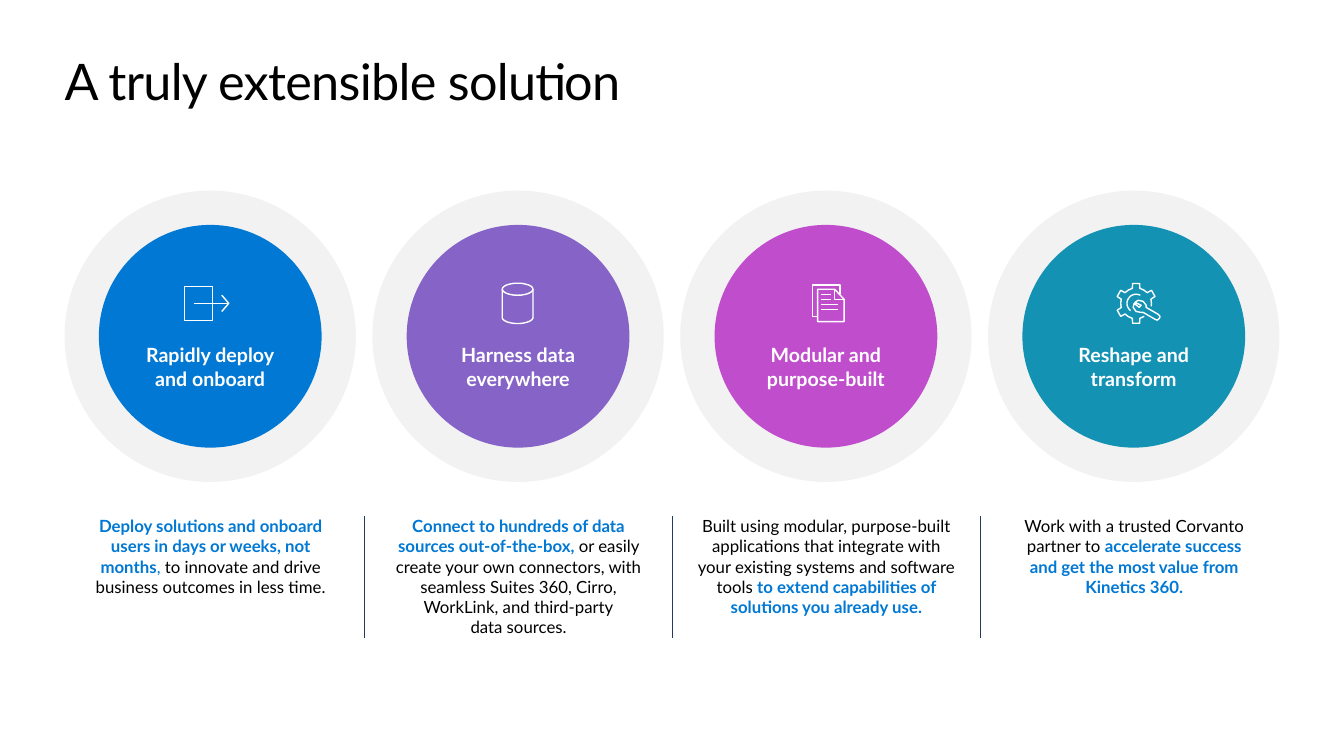
from math import cos, radians, sin

from lxml.etree import SubElement
from pptx import Presentation
from pptx.dml.color import RGBColor
from pptx.enum.shapes import MSO_CONNECTOR as Connector, MSO_SHAPE as Shape
from pptx.enum.text import MSO_ANCHOR as Anchor, PP_ALIGN as Align
from pptx.oxml.ns import qn
from pptx.util import Pt

COLORS = {
    "black": "000000", "white": "FFFFFF", "ring": "F2F2F2", "divider": "243A5E",
    "blue": "0078D4", "purple": "8663C6", "magenta": "BF4DCC", "teal": "1392B4",
}
FONT = "Lato"


def arc(cx, cy, rx, ry, start, end, steps=24):
    """Points along an ellipse; angles in degrees, clockwise from the right."""
    angles = [radians(start + (end - start) * i / steps) for i in range(steps + 1)]
    return [(cx + rx * cos(a), cy + ry * sin(a)) for a in angles]


def gear_outline(cx, cy, root, tip):
    """Five teeth of a six-tooth gear; the gap leaves room for the wrench."""
    polar = [(root, 58)]
    for tooth in range(90, 331, 60):
        polar += [(root, tooth - 14), (tip, tooth - 10), (tip, tooth + 10),
                  (root, tooth + 14), (root, tooth + 30)]
    polar.append((root, 371))
    return [(cx + r * cos(radians(a)), cy + r * sin(radians(a))) for r, a in polar]


# Icon strokes, in points from the middle of the icon.
DEPLOY = [
    [(-11.2, 0), (13.3, 0)],
    [(8.3, 5.8), (13.3, 0), (8.3, -5.8)],
    [(-18.4, -12.2), (-18.4, 12.2), (1.8, 12.2), (1.8, -12.2), (-18.4, -12.2)],
]
DATABASE = [
    arc(-0.3, -10.1, 11, 4.3, 0, 360),
    [(10.7, -10.1)] + arc(-0.3, 10.1, 11, 4.3, 0, 180) + [(-11.3, -10.1)],
]
DOCUMENTS = [
    [(-5.9, 9.4), (-9.5, 9.4), (-9.5, -13), (10, -13), (10, -6.5)],
    [(6.3, -10.1), (6.3, -2.9), (13, -2.9)],
    [(13, -2.9), (6.3, -10.1), (-5.9, -10.1), (-5.9, 13), (13, 13), (13, -2.9)],
] + [[(-3.7, y), (right, y)]
     for y, right in ((4.3, 8.5), (0.7, 8.5), (-2.9, 3.6), (-6.5, 3.6))]
WRENCH = [
    (6.8, 6.5), (15.4, 11.5), (16.8, 12), (18.3, 10.8), (18.8, 9.4), (17.6, 7.9),
    (8.9, 2.9), (8.9, 1.4), (6.8, -1.4), (3.2, -2.2), (1, -0.7), (5.3, 1.4),
    (3.9, 2.9), (0.3, 0), (-0.4, 2.9), (1.7, 5.8), (5.3, 6.5), (6.8, 6.5),
]
GEAR = [gear_outline(1.7, 0, 11, 14.4), arc(1.7, 0, 6.5, 6.5, -63, -233), WRENCH]

# Each description is a list of (text, color, bold).
TITLE = "A truly extensible solution"
PILLARS = [
    ("Rapidly deploy\nand onboard", "blue", DEPLOY, [
        ("Deploy solutions and onboard users in days or weeks, not months", "blue", True),
        (", ", "blue", False),
        ("to innovate and drive business outcomes in less time.", "black", False)]),
    ("Harness data everywhere", "purple", DATABASE, [
        ("Connect to hundreds of data sources out-of-the-box, ", "blue", True),
        ("or easily create your own connectors, with seamless Suites 360, Cirro, "
         "WorkLink, and third-party\ndata sources.", "black", False)]),
    ("Modular and\npurpose-built", "magenta", DOCUMENTS, [
        ("Built using modular, purpose-built applications that integrate with "
         "your existing systems and software tools ", "black", False),
        ("to extend capabilities of solutions you already use.", "blue", True)]),
    ("Reshape and transform", "teal", GEAR, [
        ("Work with a trusted Corvanto partner to ", "black", False),
        ("accelerate success\nand get the most value from Kinetics 360.", "blue", True)]),
]

MARGIN, TITLE_TOP, TITLE_WIDTH, TITLE_HEIGHT = 46.1, 36, 867.6, 43.9
RING, DISC, PITCH, CENTER_Y = 208.1, 159.1, 219.9, 240.2
ICON_Y, LABEL_DROP = 216.7, 43.2
COPY_TOP, COPY_WIDTH, COPY_HEIGHT, COPY_SHIFT = 368.6, 187.2, 87.4, 0.4

prs = Presentation()
prs.slide_width, prs.slide_height = Pt(960), Pt(540)
slide = prs.slides.add_slide(prs.slide_layouts[6])
shapes = slide.shapes


def rgb(name):
    return RGBColor.from_string(COLORS[name])


def write(frame, runs, size, align=Align.LEFT, anchor=Anchor.TOP, top=0, tracking=0):
    frame.word_wrap = True
    frame.vertical_anchor = anchor
    frame.margin_left = frame.margin_right = frame.margin_bottom = 0
    frame.margin_top = Pt(top)
    paragraph = frame.paragraphs[0]
    paragraph.alignment = align
    for text, color, bold in runs:
        for i, line in enumerate(text.split("\n")):
            if i:
                paragraph.add_line_break()
            run = paragraph.add_run()
            run.text = line
            run.font.name, run.font.size, run.font.bold = FONT, Pt(size), bold
            run.font.color.rgb = rgb(color)
            if tracking:
                run._r.get_or_add_rPr().set("spc", str(round(tracking * 100)))


def add_text(left, top, width, height, runs, **style):
    box = shapes.add_textbox(Pt(left), Pt(top), Pt(width), Pt(height))
    write(box.text_frame, runs, **style)


def add_circle(center_x, diameter, color):
    circle = shapes.add_shape(Shape.OVAL, Pt(center_x - diameter / 2),
                              Pt(CENTER_Y - diameter / 2), Pt(diameter), Pt(diameter))
    circle.shadow.inherit = False
    circle.fill.solid()
    circle.fill.fore_color.rgb = rgb(color)
    circle.line.fill.background()
    return circle


def add_icon(center_x, strokes):
    """Draw all strokes as one outline, on a grid of tenths of a point."""
    grid = [[(x * 10, y * 10) for x, y in stroke] for stroke in strokes]
    builder = shapes.build_freeform(*grid[0][0], scale=Pt(0.1))
    for i, stroke in enumerate(grid):
        if i:
            builder.move_to(*stroke[0])
        builder.add_line_segments(stroke[1:], close=False)
    icon = builder.convert_to_shape(Pt(center_x), Pt(ICON_Y))
    icon.shadow.inherit = False
    icon.fill.background()
    icon.line.color.rgb = rgb("white")
    icon.line.width = Pt(1)


def add_divider(x):
    divider = shapes.add_connector(Connector.STRAIGHT, Pt(x), Pt(COPY_TOP),
                                   Pt(x), Pt(COPY_TOP + COPY_HEIGHT))
    divider.line.color.rgb = rgb("divider")
    divider.line.width = Pt(1)
    SubElement(divider._element.spPr, qn("a:effectLst"))


add_text(MARGIN, TITLE_TOP, TITLE_WIDTH, TITLE_HEIGHT, [(TITLE, "black", False)],
         size=36, tracking=-0.5)
for column, (label, color, strokes, description) in enumerate(PILLARS):
    center = MARGIN + RING / 2 + column * PITCH
    add_circle(center, RING, "ring")
    disc = add_circle(center, DISC, color)
    write(disc.text_frame, [(label, "white", True)], size=14, align=Align.CENTER,
          anchor=Anchor.MIDDLE, top=LABEL_DROP)
    add_icon(center, strokes)
    copy_center = center + COPY_SHIFT
    add_text(copy_center - COPY_WIDTH / 2, COPY_TOP, COPY_WIDTH, COPY_HEIGHT,
             description, size=12, align=Align.CENTER)
    if column < len(PILLARS) - 1:
        add_divider(copy_center + PITCH / 2)

prs.save("out.pptx")
